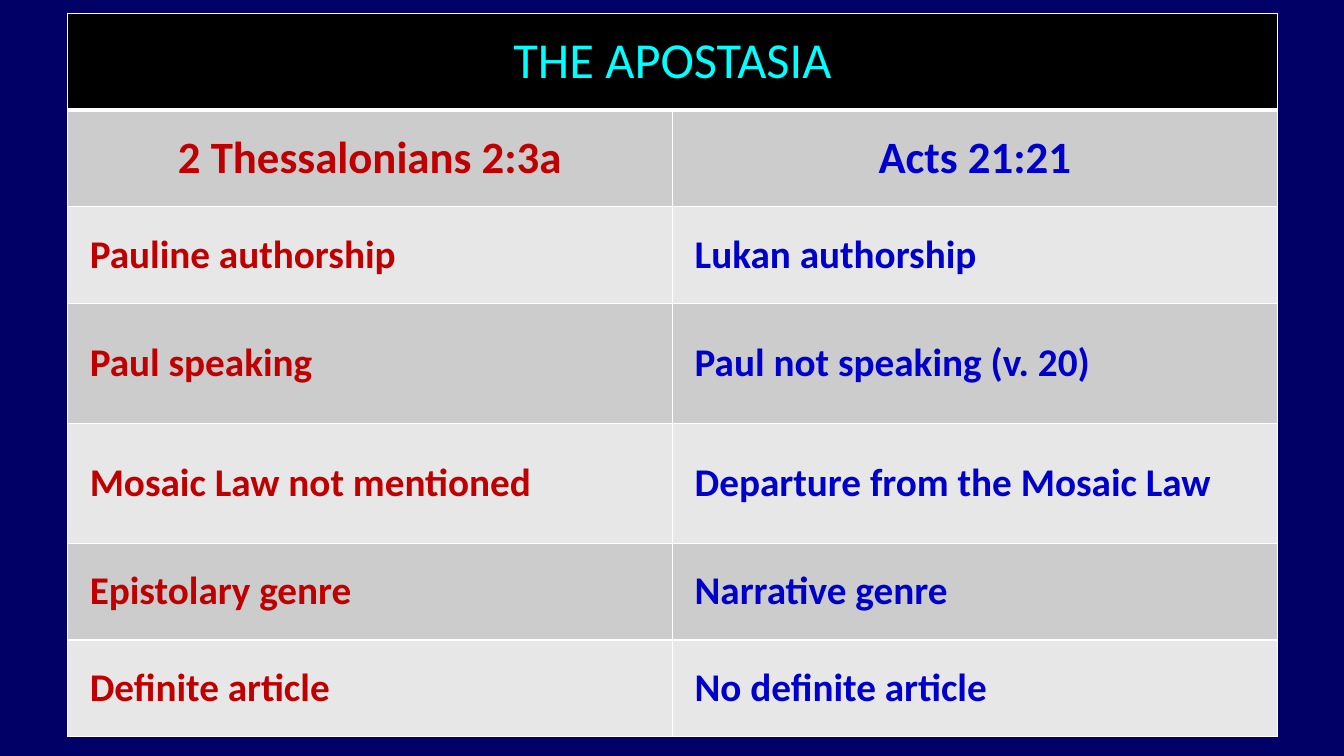
from dataclasses import dataclass

from lxml import etree
from pptx import Presentation
from pptx.dml.color import RGBColor
from pptx.enum.text import MSO_ANCHOR, PP_ALIGN
from pptx.oxml.ns import qn
from pptx.table import _Cell
from pptx.util import Inches, Pt

CENTER, LEFT = PP_ALIGN.CENTER, PP_ALIGN.LEFT
MIDDLE = MSO_ANCHOR.MIDDLE

NAVY = RGBColor(0x00, 0x00, 0x66)
BLACK = RGBColor(0x00, 0x00, 0x00)
WHITE = RGBColor(0xFF, 0xFF, 0xFF)
CYAN = RGBColor(0x00, 0xFF, 0xFF)
RED = RGBColor(0xC0, 0x00, 0x00)
BLUE = RGBColor(0x00, 0x00, 0xCC)
DARK_BAND = RGBColor(0xCC, 0xCC, 0xCC)
LIGHT_BAND = RGBColor(0xE7, 0xE7, 0xE7)

THIN, THICK = Pt(1), Pt(3)
INDENT = Inches(0.12)


@dataclass
class Comparison:
    thessalonians: str
    acts: str
    height: float = 0.96


TITLE = "THE APOSTASIA"
TITLE_HEIGHT = 0.96
COMPARISONS = [
    Comparison("2 Thessalonians 2:3a", "Acts 21:21"),
    Comparison("Pauline authorship", "Lukan authorship"),
    Comparison("Paul speaking", "Paul not speaking (v. 20)", 1.19),
    Comparison("Mosaic Law not mentioned", "Departure from the Mosaic Law", 1.19),
    Comparison("Epistolary genre", "Narrative genre"),
    Comparison("Definite article", "No definite article"),
]


def set_borders(cell: _Cell, top: int = THIN, bottom: int = THIN) -> None:
    """Add white borders; call before filling, as borders precede the fill."""
    tc_pr = cell._tc.get_or_add_tcPr()
    widths = {"a:lnL": THIN, "a:lnR": THIN, "a:lnT": top, "a:lnB": bottom}
    for tag, width in widths.items():
        line = etree.SubElement(tc_pr, qn(tag), w=str(int(width)))
        fill = etree.SubElement(line, qn("a:solidFill"))
        etree.SubElement(fill, qn("a:srgbClr"), val=str(WHITE))


def fill_cell(cell: _Cell, color: RGBColor) -> None:
    cell.fill.solid()
    cell.fill.fore_color.rgb = color


def write_cell(cell: _Cell, text: str, color: RGBColor, size: int,
               bold: bool = True, centered: bool = True) -> None:
    cell.vertical_anchor = MIDDLE
    p = cell.text_frame.paragraphs[0]
    p.alignment = CENTER if centered else LEFT
    if not centered:
        p._p.get_or_add_pPr().set("marL", str(int(INDENT)))
    r = p.add_run()
    r.text = text
    r.font.color.rgb = color
    font_format = {"name": "Calibri", "size": Pt(size), "bold": bold}
    for name, value in font_format.items():
        setattr(r.font, name, value)


def main() -> None:
    prs = Presentation()
    prs.slide_width, prs.slide_height = Inches(13.33), Inches(7.5)
    s = prs.slides.add_slide(prs.slide_layouts[6])
    s.background.fill.solid()
    s.background.fill.fore_color.rgb = NAVY

    heights = [TITLE_HEIGHT] + [c.height for c in COMPARISONS]
    table = s.shapes.add_table(len(heights), 2, Inches(0.67), Inches(0.13),
                               Inches(12), Inches(sum(heights))).table
    for row, height in zip(table.rows, heights):
        row.height = Inches(height)

    title = table.cell(0, 0)
    title.merge(table.cell(0, 1))
    for cell in table.rows[0].cells:
        set_borders(cell, bottom=THICK)
        fill_cell(cell, BLACK)
    write_cell(title, TITLE, CYAN, 36, bold=False)

    for i, comparison in enumerate(COMPARISONS, start=1):
        heading = i == 1
        entries = [(comparison.thessalonians, RED), (comparison.acts, BLUE)]
        for cell, (text, color) in zip(table.rows[i].cells, entries):
            set_borders(cell, top=THICK if heading else THIN)
            fill_cell(cell, DARK_BAND if i % 2 else LIGHT_BAND)
            write_cell(cell, text, color, 32 if heading else 28, centered=heading)

    prs.save("out.pptx")


if __name__ == "__main__":
    main()
